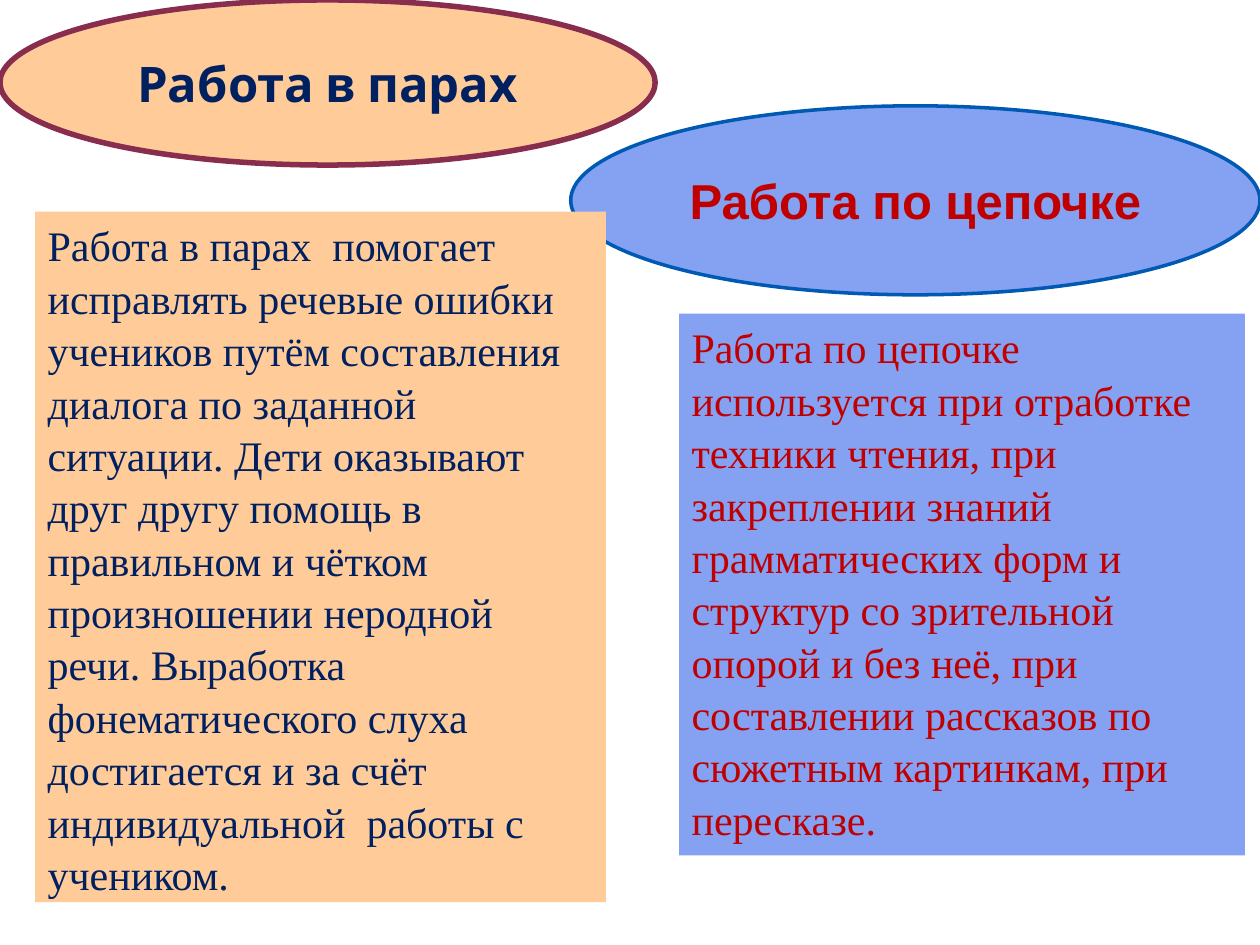
from dataclasses import dataclass

from pptx import Presentation
from pptx.dml.color import RGBColor
from pptx.enum.shapes import MSO_SHAPE
from pptx.enum.text import MSO_ANCHOR, PP_ALIGN
from pptx.util import Inches, Pt

OVAL, RECTANGLE = MSO_SHAPE.OVAL, MSO_SHAPE.RECTANGLE
MIDDLE, TOP = MSO_ANCHOR.MIDDLE, MSO_ANCHOR.TOP
CENTER, LEFT = PP_ALIGN.CENTER, PP_ALIGN.LEFT


@dataclass(frozen=True)
class Theme:
    """Colours, fonts and type sizes of the slide."""
    peach: str = "FFCC99"
    plum: str = "882D4D"
    navy: str = "002060"
    periwinkle: str = "84A1F2"
    blue: str = "0059B2"
    red: str = "C00000"
    body_font: str = "Times New Roman"
    title_size: int = 28
    body_size: int = 24
    body_spacing: float = 1.04


THEME = Theme()

PAIRS_TEXT = (
    "Работа в парах  помогает исправлять речевые ошибки учеников путём "
    "составления диалога по заданной ситуации. Дети оказывают друг другу "
    "помощь в правильном и чётком произношении неродной речи. Выработка "
    "фонематического слуха достигается и за счёт индивидуальной  работы с "
    "учеником."
)
CHAIN_TEXT = (
    "Работа по цепочке используется при отработке техники чтения, при "
    "закреплении знаний грамматических форм и структур со зрительной опорой "
    "и без неё, при составлении рассказов по сюжетным картинкам, при "
    "пересказе."
)


def add_panel(slide, kind, box, fill, text, anchor, paragraph_format, font_format):
    """Add a filled shape with one formatted paragraph and return it."""
    panel = slide.shapes.add_shape(kind, *map(Inches, box))
    panel.shadow.inherit = False
    panel.fill.solid()
    panel.fill.fore_color.rgb = RGBColor.from_string(fill)
    panel.line.fill.background()
    frame = panel.text_frame
    frame.word_wrap = True
    frame.vertical_anchor = anchor
    paragraph = frame.paragraphs[0]
    run = paragraph.add_run()
    run.text = text
    for target, values in ((paragraph, paragraph_format), (run.font, font_format)):
        for name, value in values.items():
            if name == "color":
                target.color.rgb = RGBColor.from_string(value)
            else:
                setattr(target, name, value)
    return panel


def add_heading(slide, box, fill, outline, width, text, font, color):
    """Add an outlined oval with a bold centred heading."""
    heading = add_panel(
        slide, OVAL, box, fill, text, MIDDLE, {"alignment": CENTER},
        {"name": font, "size": Pt(THEME.title_size), "bold": True, "color": color})
    heading.line.color.rgb = RGBColor.from_string(outline)
    heading.line.width = Pt(width)


def add_description(slide, box, fill, text, color):
    """Add a plain rectangle with left-aligned body text."""
    add_panel(
        slide, RECTANGLE, box, fill, text, TOP,
        {"alignment": LEFT, "line_spacing": THEME.body_spacing},
        {"name": THEME.body_font, "size": Pt(THEME.body_size), "color": color})


def main():
    """Build the slide and save it."""
    deck = Presentation()
    deck.slide_width, deck.slide_height = Inches(10), Inches(7.5)
    slide = deck.slides.add_slide(deck.slide_layouts[6])
    add_heading(slide, (0, 0, 5.2, 1.31), THEME.peach, THEME.plum, 3.15,
                "Работа в парах", "Cabin", THEME.navy)
    add_heading(slide, (4.53, 0.84, 5.47, 1.5), THEME.periwinkle, THEME.blue, 2,
                "Работа по цепочке", "Arial", THEME.red)
    add_description(slide, (0.28, 1.68, 4.53, 5.48), THEME.peach, PAIRS_TEXT, THEME.navy)
    add_description(slide, (5.39, 2.49, 4.49, 4.3), THEME.periwinkle, CHAIN_TEXT, THEME.red)
    deck.save("out.pptx")


if __name__ == "__main__":
    main()
